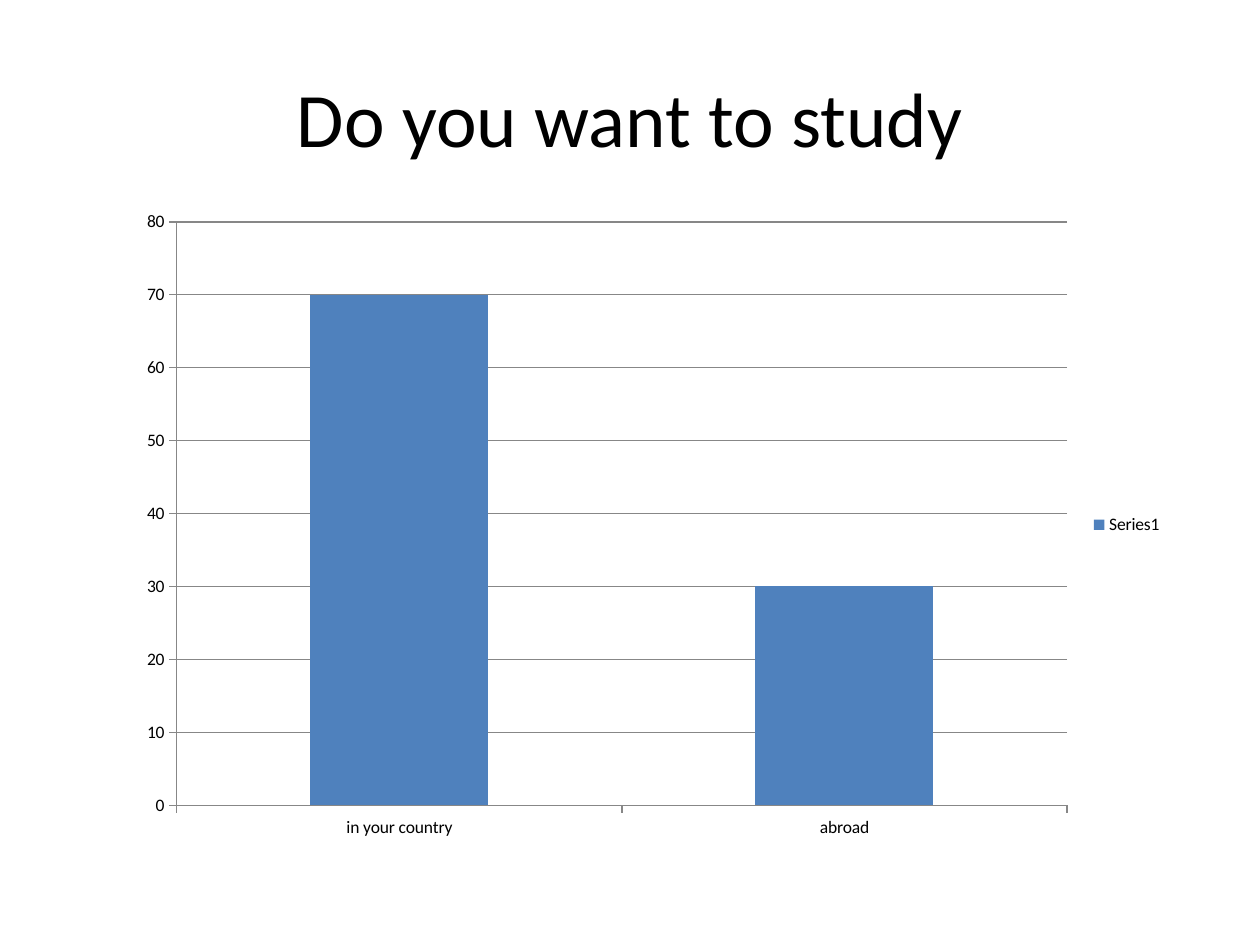
from pptx import Presentation
from pptx import util as u
from pptx.chart.data import CategoryChartData
from pptx.dml.color import RGBColor
from pptx.enum import chart as charts, text


def colour(value):
    return RGBColor.from_string(value)


class SlideBuilder:
    font = "Calibri"
    ink = "000000"
    axis_grey = "878787"
    bar_blue = "4F81BD"

    def __init__(self, slide):
        self.slide = slide

    def style_font(self, font, size):
        font.name = self.font
        font.size = u.Pt(size)
        font.color.rgb = colour(self.ink)

    def style_line(self, line):
        line.color.rgb = colour(self.axis_grey)
        line.width = u.Pt(0.75)

    def title(self, wording, left, top, width, height):
        box = self.slide.shapes.add_textbox(*map(u.Inches, (left, top, width, height)))
        frame = box.text_frame
        frame.text = wording
        frame.word_wrap = True
        frame.vertical_anchor = text.MSO_ANCHOR.MIDDLE
        para = frame.paragraphs[0]
        para.alignment = text.PP_ALIGN.CENTER
        self.style_font(para.runs[0].font, 44)

    def column_chart(self, answers, series_name, left, top, width, height):
        data = CategoryChartData()
        data.categories = list(answers)
        data.add_series(series_name, list(answers.values()))
        chart = self.slide.shapes.add_chart(
            charts.XL_CHART_TYPE.COLUMN_STACKED,
            *map(u.Inches, (left, top, width, height)), data).chart
        chart.has_title = False
        self.style_font(chart.font, 10)

        plot = chart.plots[0]
        plot.gap_width = 150
        plot.overlap = 100
        plot.vary_by_categories = False
        fill = plot.series[0].format.fill
        fill.solid()
        fill.fore_color.rgb = colour(self.bar_blue)

        for axis in (chart.category_axis, chart.value_axis):
            axis.major_tick_mark = charts.XL_TICK_MARK.OUTSIDE
            axis.minor_tick_mark = charts.XL_TICK_MARK.NONE
            self.style_line(axis.format.line)
        chart.value_axis.minimum_scale = 0
        chart.value_axis.maximum_scale = 80
        chart.value_axis.major_unit = 10
        chart.value_axis.has_major_gridlines = True
        self.style_line(chart.value_axis.major_gridlines.format.line)

        chart.has_legend = True
        chart.legend.position = charts.XL_LEGEND_POSITION.RIGHT
        chart.legend.include_in_layout = False


def main():
    deck = Presentation()
    deck.slide_width = u.Inches(10)
    deck.slide_height = u.Inches(7.5)
    builder = SlideBuilder(deck.slides.add_slide(deck.slide_layouts[6]))
    builder.title("Do you want to study", 0.5, 0.3, 9, 1.25)
    builder.column_chart({"in your country": 70, "abroad": 30}, "Series1",
                         1, 1.58, 8.33, 5.17)
    deck.save("out.pptx")


if __name__ == "__main__":
    main()
